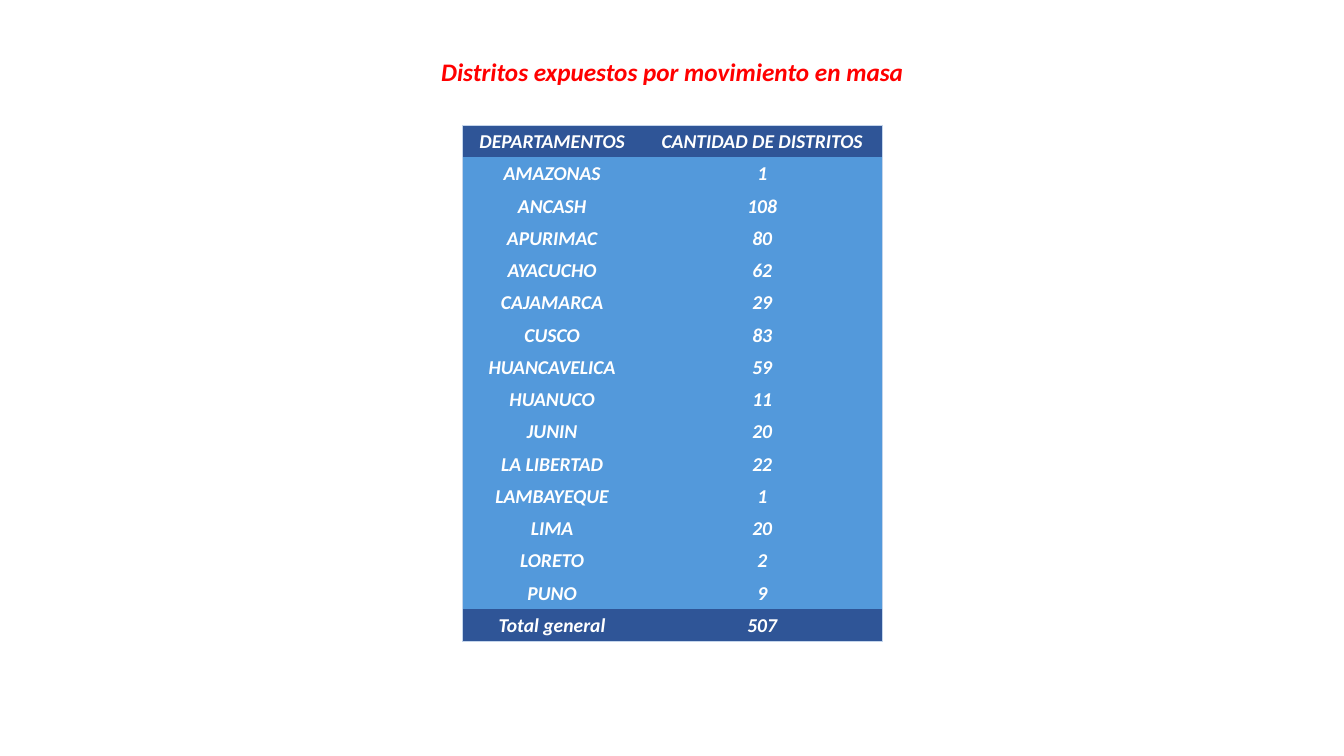
from lxml.etree import SubElement
from pptx import Presentation
from pptx.dml.color import RGBColor
from pptx.enum.text import MSO_ANCHOR, MSO_AUTO_SIZE, PP_ALIGN
from pptx.oxml.ns import qn
from pptx.util import Pt

TITLE = "Distritos expuestos por movimiento en masa"
HEAD = ("DEPARTAMENTOS", "CANTIDAD DE DISTRITOS")
COUNTS = [
    ("AMAZONAS", 1),
    ("ANCASH", 108),
    ("APURIMAC", 80),
    ("AYACUCHO", 62),
    ("CAJAMARCA", 29),
    ("CUSCO", 83),
    ("HUANCAVELICA", 59),
    ("HUANUCO", 11),
    ("JUNIN", 20),
    ("LA LIBERTAD", 22),
    ("LAMBAYEQUE", 1),
    ("LIMA", 20),
    ("LORETO", 2),
    ("PUNO", 9),
]
TOTAL = ("Total general", sum(count for _, count in COUNTS))
ROWS = [HEAD, *COUNTS, TOTAL]

COLORS = {"title": "FF0000", "text": "FFFFFF", "band": "2F5597",
          "body": "5399DB", "edge": "C4D5EB"}
FONT = "Calibri"
NO_STYLE = "{2D5ABB26-0587-4C30-8999-92F81FD0307C}"
LEFT, TOP = 330.3, 89.4
WIDTHS = (128.2, 172)
ROW_H = 23.07


def write(frame, text, size, color):
    par = frame.paragraphs[0]
    par.text = str(text)
    par.alignment = PP_ALIGN.CENTER
    font = par.font
    font.name, font.size = FONT, Pt(size)
    font.bold = font.italic = True
    font.color.rgb = RGBColor.from_string(COLORS[color])


def add_edge(cell, side):
    """Draw a thin line on one side (L, R, T or B) of a cell."""
    line = SubElement(cell._tc.get_or_add_tcPr(), qn(f"a:ln{side}"), w=str(Pt(0.5)))
    fill = SubElement(line, qn("a:solidFill"))
    SubElement(fill, qn("a:srgbClr"), val=COLORS["edge"])


def add_title(slide):
    box = slide.shapes.add_textbox(Pt(306), Pt(36.9), Pt(348.5), Pt(29.1))
    frame = box.text_frame
    frame.word_wrap = False
    frame.auto_size = MSO_AUTO_SIZE.SHAPE_TO_FIT_TEXT
    write(frame, TITLE, 18, "title")


def add_counts(slide):
    last_row, last_col = len(ROWS) - 1, len(WIDTHS) - 1
    frame = slide.shapes.add_table(len(ROWS), len(WIDTHS), Pt(LEFT), Pt(TOP),
                                   Pt(sum(WIDTHS)), Pt(ROW_H * len(ROWS)))
    table = frame.table
    table.horz_banding = False
    table._tbl.tblPr.find(qn("a:tableStyleId")).text = NO_STYLE
    for col, width in zip(table.columns, WIDTHS):
        col.width = Pt(width)
    for r, row in enumerate(ROWS):
        table.rows[r].height = Pt(ROW_H)
        for c, value in enumerate(row):
            cell = table.cell(r, c)
            cell.margin_left = cell.margin_right = cell.margin_top = Pt(0.7)
            cell.margin_bottom = 0
            cell.vertical_anchor = MSO_ANCHOR.MIDDLE
            edges = {"L": c == 0, "R": c == last_col,
                     "T": r == 0, "B": r == last_row}
            for side, outer in edges.items():
                if outer:
                    add_edge(cell, side)
            fill = "band" if r in (0, last_row) else "body"
            cell.fill.solid()
            cell.fill.fore_color.rgb = RGBColor.from_string(COLORS[fill])
            write(cell.text_frame, value, 14, "text")


def main():
    deck = Presentation()
    deck.slide_width, deck.slide_height = Pt(960), Pt(540)
    slide = deck.slides.add_slide(deck.slide_layouts[6])
    add_title(slide)
    add_counts(slide)
    deck.save("out.pptx")


if __name__ == "__main__":
    main()
